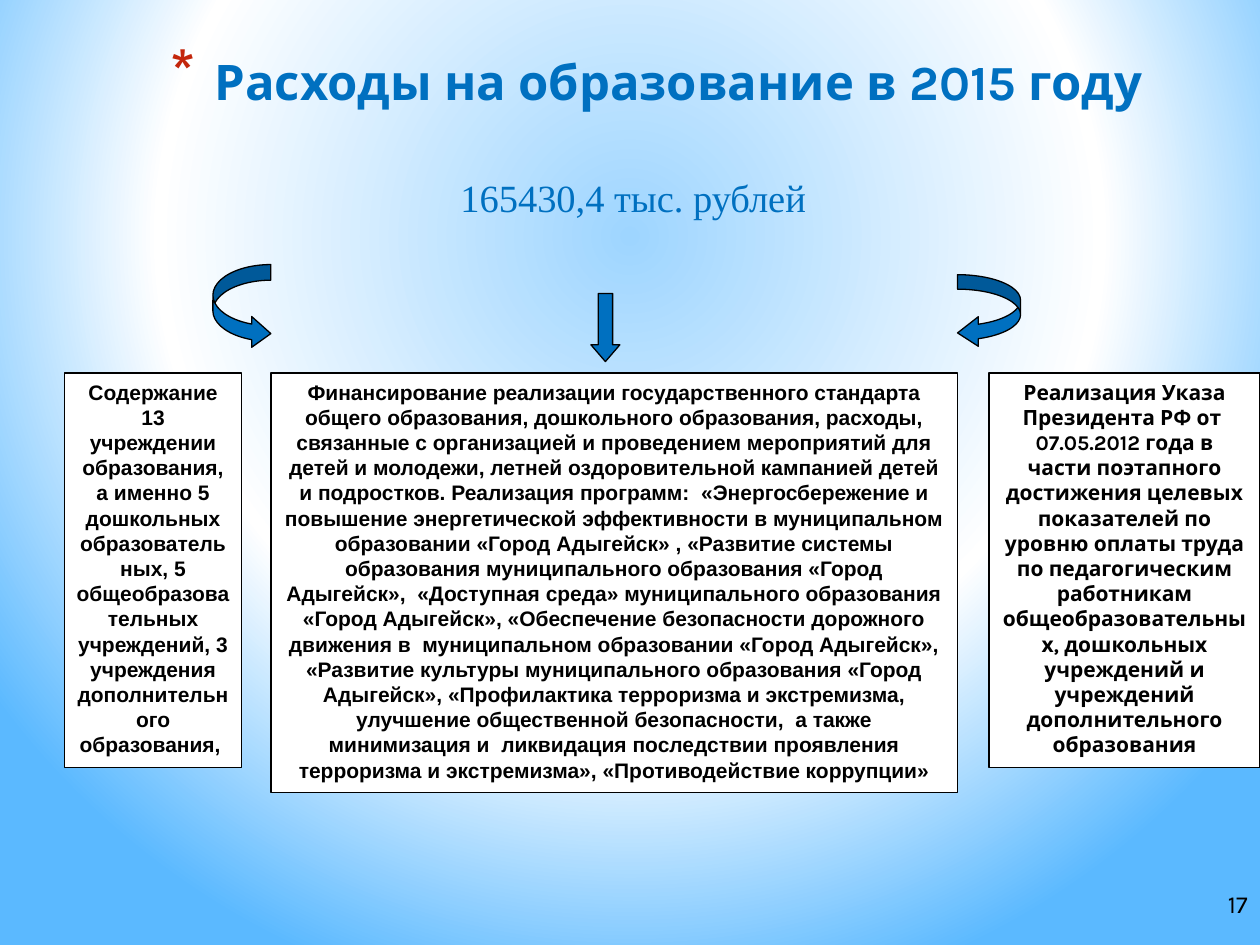
from pptx import Presentation, util as u
from pptx.dml import color
from pptx.enum import shapes, text
from pptx.oxml import parse_xml
from pptx.oxml.ns import nsdecls

WIDTH, HEIGHT = 10, 7.5
BLUE, BLACK, WHITE = "0070C0", "000000", "FFFFFF"
CARD_TOP = 2.96
CARD_FONT = {"size": u.Pt(12), "bold": True}

MAINTENANCE = (
    "Содержание 13 учреждении образования, а именно 5 дошкольных образовательных, "
    "5 общеобразовательных учреждений, 3 учреждения дополнительного образования, "
)
STANDARD = (
    "Финансирование реализации государственного стандарта общего образования, "
    "дошкольного образования, расходы, связанные с организацией и проведением "
    "мероприятий для детей и молодежи, летней оздоровительной кампанией детей и "
    "подростков."
)
PROGRAMMES = (
    "Реализация программ:  «Энергосбережение и повышение энергетической "
    "эффективности в муниципальном образовании «Город Адыгейск» , «Развитие системы "
    "образования муниципального образования «Город Адыгейск»,  «Доступная среда» "
    "муниципального образования «Город Адыгейск», «Обеспечение безопасности дорожного "
    "движения в  муниципальном образовании «Город Адыгейск», «Развитие культуры "
    "муниципального образования «Город Адыгейск», «Профилактика терроризма и "
    "экстремизма, улучшение общественной безопасности,  а также минимизация и  "
    "ликвидация последствии проявления терроризма и экстремизма», «Противодействие "
    "коррупции»"
)
DECREE = (
    "Реализация Указа Президента РФ от  07.05.2012 года в части поэтапного достижения "
    "целевых показателей по уровню оплаты труда по педагогическим работникам "
    "общеобразовательных, дошкольных учреждений и учреждений дополнительного образования"
)


def rgb(value):
    """Turn a hex string into a colour."""
    return color.RGBColor.from_string(value)


def inches(*values):
    """Turn numbers into lengths."""
    return [u.Inches(value) for value in values]


def paint_background(page):
    """Fill the page with a circular gradient around its upper middle."""
    stops = "".join(
        f'<a:gs pos="{share * 1000}"><a:srgbClr val="{value}"/></a:gs>'
        for share, value in [(0, "9ED5FF"), (60, WHITE), (100, "5BB9FF")]
    )
    page.element.cSld.insert(0, parse_xml(
        f'<p:bg {nsdecls("p", "a")}><p:bgPr><a:gradFill rotWithShape="1">'
        f'<a:gsLst>{stops}</a:gsLst><a:path path="circle">'
        '<a:fillToRect l="20000" t="10000" r="20000" b="60000"/></a:path>'
        '</a:gradFill><a:effectLst/></p:bgPr></p:bg>'
    ))


def write(box, words, face, hue, font, align=text.PP_ALIGN.CENTER,
          anchor=text.MSO_ANCHOR.TOP, wrap=True):
    """Put one formatted paragraph in a box and return it."""
    frame = box.text_frame
    frame.word_wrap, frame.vertical_anchor = wrap, anchor
    para = frame.paragraphs[0]
    para.alignment = align
    span = para.add_run()
    span.text = words
    span.font.color.rgb = rgb(hue)
    for name, value in {"name": face, **font}.items():
        setattr(span.font, name, value)
    return para


def add_text(page, place, words, face, hue, font, **layout):
    """Add a text box and return its paragraph."""
    return write(page.shapes.add_textbox(*inches(*place)), words, face, hue, font, **layout)


def indent(para, margin, first):
    """Set the left margin and first-line indent and return the properties."""
    props = para._p.get_or_add_pPr()
    for name, value in {"marL": margin, "indent": first}.items():
        props.set(name, str(u.Inches(value)))
    return props


def add_bullet(props, mark, hue, percent):
    """Give a paragraph a coloured bullet."""
    for tag in (
        f'<a:buClr {nsdecls("a")}><a:srgbClr val="{hue}"/></a:buClr>',
        f'<a:buSzPct {nsdecls("a")} val="{percent * 1000}"/>',
        f'<a:buChar {nsdecls("a")} char="{mark}"/>',
    ):
        props.append(parse_xml(tag))


def add_figure(page, kind, place, fill, adjustments=()):
    """Add a filled preset shape with a thin black outline."""
    figure = page.shapes.add_shape(kind, *inches(*place))
    figure.shadow.inherit = False
    figure.fill.solid()
    figure.fill.fore_color.rgb = rgb(fill)
    figure.line.color.rgb = rgb(BLACK)
    figure.line.width = u.Pt(0.75)
    for index, value in enumerate(adjustments):
        figure.adjustments[index] = value
    return figure


def add_card(page, left, width, height, words, face):
    """Add a white card of bold centred text on the common top line."""
    card = add_figure(page, shapes.MSO_SHAPE.RECTANGLE, (left, CARD_TOP, width, height), WHITE)
    write(card, words, face, BLACK, CARD_FONT)
    card.text_frame.auto_size = text.MSO_AUTO_SIZE.SHAPE_TO_FIT_TEXT


def main():
    """Build the slide and save it."""
    deck = Presentation()
    deck.slide_width, deck.slide_height = inches(WIDTH, HEIGHT)
    page = deck.slides.add_slide(deck.slide_layouts[6])
    paint_background(page)

    add_text(page, (7.92, 6.92, 2.08, 0.5), "17", "Karla", BLACK, {"size": u.Pt(14)},
             align=text.PP_ALIGN.RIGHT, anchor=text.MSO_ANCHOR.MIDDLE, wrap=False)
    title = add_text(page, (0.67, 0.36, 9.08, 1.03), "Расходы на образование в 2015 году",
                     "Karla", BLUE, {"size": u.Pt(28), "bold": True})
    add_bullet(indent(title, 0.35, -0.35), "*", "C3260C", 128)
    total = add_text(page, (0.5, 1.33, 9, 5.38), "165430,4 тыс. рублей",
                     "Times New Roman", BLUE, {"size": u.Pt(22)})
    total.space_before, total.space_after = u.Pt(4), u.Pt(3)
    indent(total, 0.25, -0.2)

    for card in [
        (0.51, 1.41, 3.13, MAINTENANCE, "Arial"),
        (2.15, 5.45, 3.33, " ".join([STANDARD, PROGRAMMES]), "Arial"),
        (7.85, 2.15, 3.13, DECREE, "Karla"),
    ]:
        add_card(page, *card)

    kinds = shapes.MSO_SHAPE
    for kind, place, adjustments in [
        (kinds.CURVED_RIGHT_ARROW, (1.69, 2.1, 0.46, 0.67), (0.27, 0.53, 0.33)),
        (kinds.CURVED_LEFT_ARROW, (7.6, 2.18, 0.5, 0.58), (0.23, 0.47, 0.33)),
        (kinds.DOWN_ARROW, (4.69, 2.33, 0.23, 0.54), (0.5, 0.58)),
    ]:
        add_figure(page, kind, place, BLUE, adjustments)

    deck.save("out.pptx")


if __name__ == "__main__":
    main()
